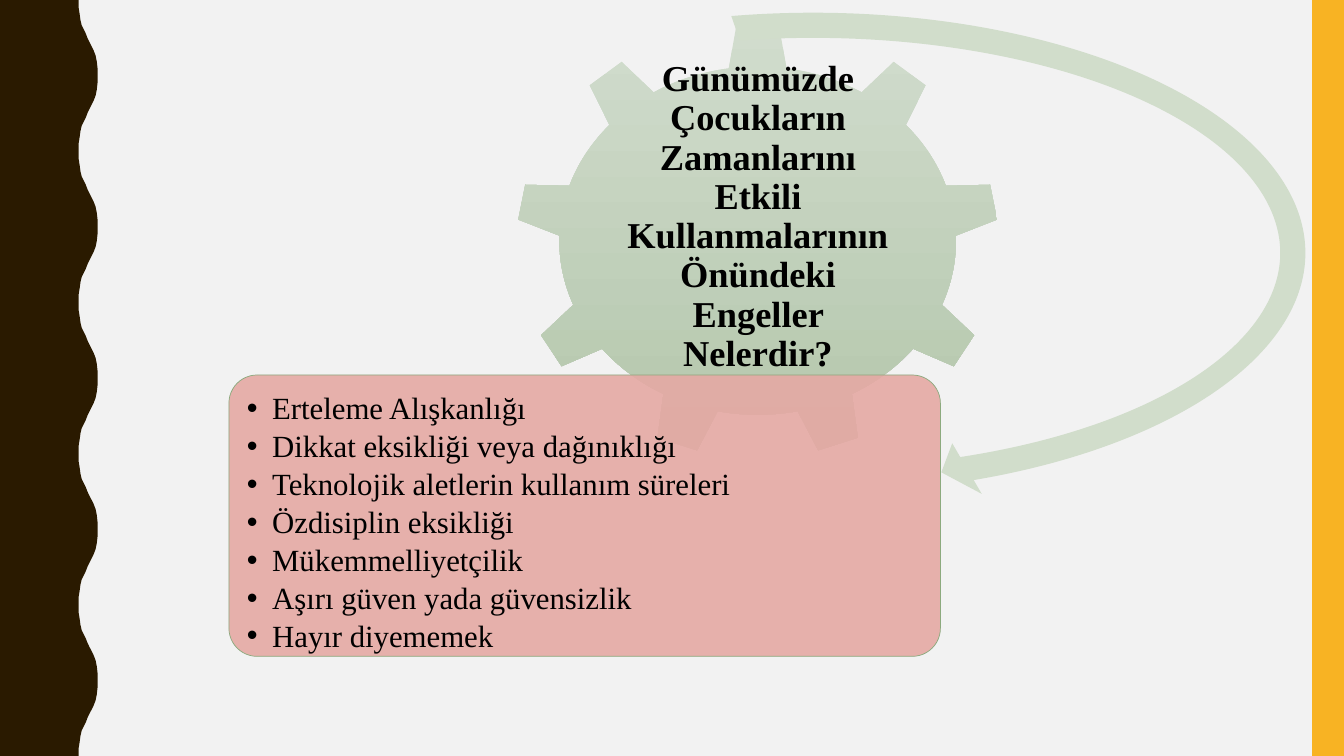
"""Build the slide on what keeps children from using their time well."""
import pptx
import pptx.dml.color
import pptx.enum.shapes
import pptx.enum.text
import pptx.oxml
import pptx.oxml.ns
import pptx.util

Cm, Pt = pptx.util.Cm, pptx.util.Pt
KIND = pptx.enum.shapes.MSO_SHAPE
ALIGN = pptx.enum.text.PP_ALIGN
ANCHOR = pptx.enum.text.MSO_ANCHOR

FONT = "Times New Roman"
TITLE = "Günümüzde Çocukların Zamanlarını Etkili Kullanmalarının Önündeki Engeller Nelerdir?"
ITEMS = [
    "Erteleme Alışkanlığı",
    "Dikkat eksikliği veya dağınıklığı",
    "Teknolojik aletlerin kullanım süreleri",
    "Özdisiplin eksikliği",
    "Mükemmelliyetçilik",
    "Aşırı güven yada güvensizlik",
    "Hayır diyememek",
]
SIZE = (33.87, 19.05)
BOXES = {
    "bar": (33.07, 0, 0.8, 19.05),
    "gear": (13, 0.58, 12.19, 10.97),
    "title": (15.37, 1.41, 7.47, 8.13),
    "card": (5.77, 9.45, 17.93, 7.09),
    "body": (5.99, 9.68, 17.53, 6.68),
    "arrow": (7.67, -0.1, 25.65, 12.95),
}
BENDS = (0.049, 3.126, 32.703, 150.56, 0.057)
WAVES = 5
PERIOD = 3.81
CURVE = [
    (1.98, 0), (1.98, 0.18), (2.01, 0.36), (2.03, 0.51), (2.06, 0.64),
    (2.11, 0.74), (2.16, 0.84), (2.21, 0.97), (2.26, 1.07), (2.31, 1.17),
    (2.36, 1.27), (2.41, 1.4), (2.44, 1.55), (2.46, 1.73), (2.46, 1.91),
]


def tint(text):
    return pptx.dml.color.RGBColor.from_string(text)


def paint(shape, color):
    shape.shadow.inherit = False
    shape.line.fill.background()
    shape.fill.solid()
    shape.fill.fore_color.rgb = tint(color)


def draw(slide, kind, name, color):
    shape = slide.shapes.add_shape(kind, *map(Cm, BOXES[name]))
    paint(shape, color)
    return shape


def border(slide):
    whole = CURVE + [(x, PERIOD - y) for x, y in CURVE[-2::-1]]
    edge = [(x, y + n * PERIOD) for n in range(WAVES) for x, y in whole]
    points = [(Cm(x), Cm(y)) for x, y in edge + [(0, SIZE[1])]]
    build = slide.shapes.build_freeform(0, 0)
    build.add_line_segments(points, close=True)
    paint(build.convert_to_shape(), "2A1A00")


def place(holder, name, anchor, inset):
    holder.left, holder.top, holder.width, holder.height = map(Cm, BOXES[name])
    tree = holder.element.getparent()
    tree.append(holder.element)
    frame = holder.text_frame
    frame.word_wrap = True
    frame.auto_size = pptx.enum.text.MSO_AUTO_SIZE.NONE
    frame.vertical_anchor = anchor
    frame.margin_left = frame.margin_right = Cm(inset)
    frame.margin_top = frame.margin_bottom = Cm(inset)
    return frame


def write(para, text, size, bold, align, after):
    para.alignment = align
    para.line_spacing = 0.9
    para.space_before = Pt(0)
    para.space_after = Pt(after)
    run = para.add_run()
    run.text = text
    run.font.name = FONT
    run.font.size = Pt(size)
    run.font.bold = bold
    run.font.color.rgb = tint("000000")


def main():
    deck = pptx.Presentation()
    deck.slide_width, deck.slide_height = map(Cm, SIZE)
    slide = deck.slides.add_slide(deck.slide_layouts[1])
    back = slide.background.fill
    back.solid()
    back.fore_color.rgb = tint("F2F2F2")

    border(slide)
    draw(slide, KIND.RECTANGLE, "bar", "F8B323")

    gear = draw(slide, KIND.GEAR_9, "gear", "D1DCCD")
    gear.fill.gradient()
    gear.fill.gradient_angle = 270
    for stop, color in zip(gear.fill.gradient_stops, ("D1DCCD", "B3C6AB")):
        stop.color.rgb = tint(color)

    frame = place(slide.shapes.title, "title", ANCHOR.MIDDLE, 0.1)
    write(frame.paragraphs[0], TITLE, 26, True, ALIGN.CENTER, 0)

    card = draw(slide, KIND.ROUNDED_RECTANGLE, "card", "E5A9A4")
    card.adjustments[0] = 0.1
    card.line.color.rgb = tint("8CAA7E")
    card.line.width = Pt(0.5)
    shade = card.element.spPr.find(pptx.oxml.ns.qn("a:solidFill"))[0]
    space = pptx.oxml.ns.nsdecls("a")
    shade.append(pptx.oxml.parse_xml(f'<a:alpha {space} val="90000"/>'))

    frame = place(slide.placeholders[1], "body", ANCHOR.TOP, 0.23)
    for n, item in enumerate(ITEMS):
        para = frame.add_paragraph() if n else frame.paragraphs[0]
        write(para, item, 22, False, ALIGN.LEFT, 3.3)
        props = para._p.get_or_add_pPr()
        props.set("marL", str(Cm(0.64)))
        props.set("indent", str(-Cm(0.64)))

    arrow = draw(slide, KIND.CIRCULAR_ARROW, "arrow", "D1DDCB")
    for n, bend in enumerate(BENDS):
        arrow.adjustments[n] = bend

    deck.save("out.pptx")


if __name__ == "__main__":
    main()
